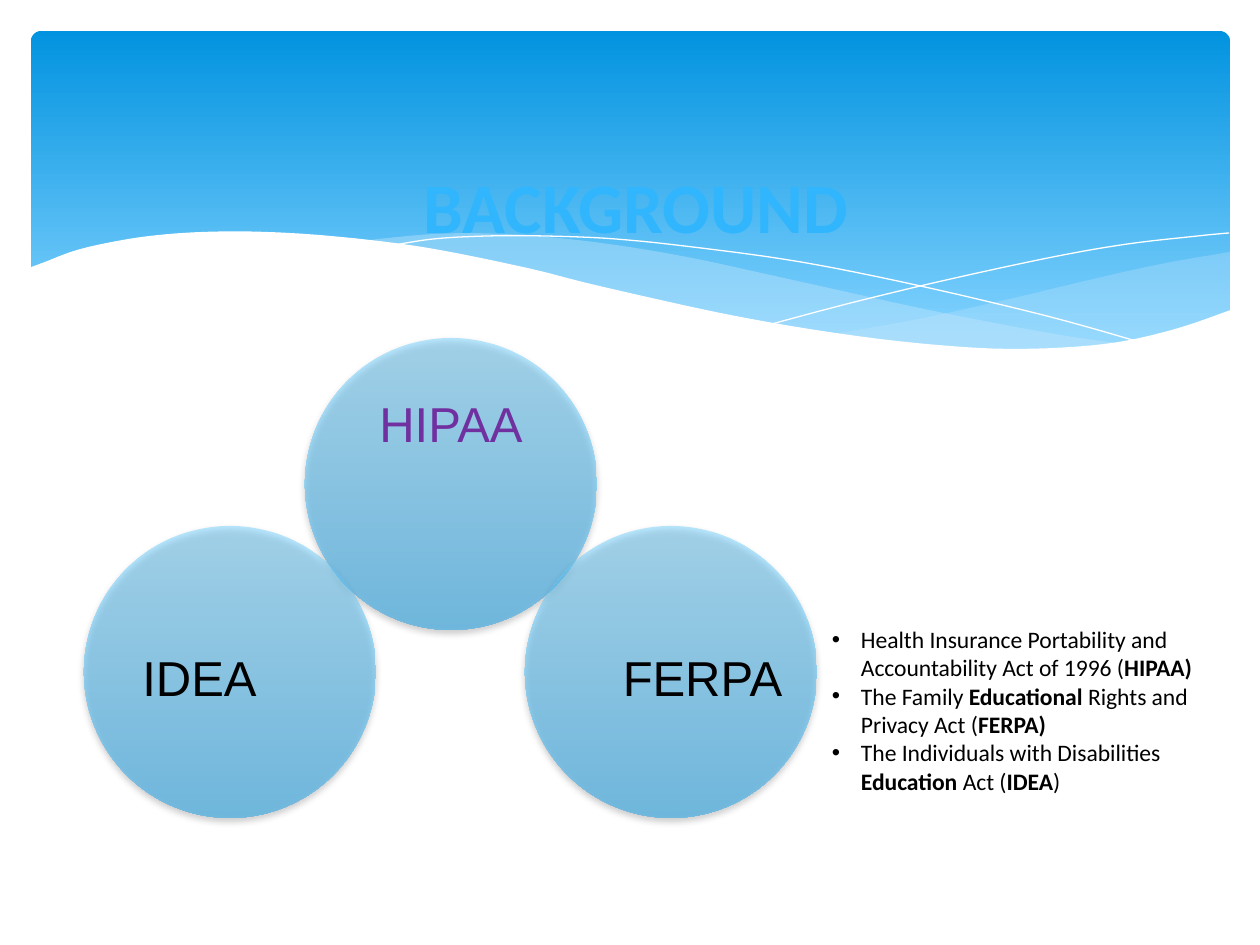
import pptx
import pptx.dml.color
import pptx.enum.shapes
import pptx.enum.text
import pptx.oxml
import pptx.oxml.ns
import pptx.util

EMU_PER_PX = 914400 / 126
SMOOTH_STEPS = 6


def px(length):
    return pptx.util.Emu(round(length * EMU_PER_PX))


def color(hex_string):
    return pptx.dml.color.RGBColor.from_string(hex_string)


def add_xml(parent, tag, **attributes):
    element = pptx.oxml.ns.qn(tag)
    child = parent.makeelement(element, attributes)
    parent.append(child)
    return child


def smooth(points):
    padded = [points[0], *points, points[-1]]
    curve = [points[0]]
    for a, b, c, d in zip(padded, padded[1:], padded[2:], padded[3:]):
        for step in range(1, SMOOTH_STEPS + 1):
            t = step / SMOOTH_STEPS
            curve.append(tuple(
                (2 * q + (r - p) * t + (2 * p - 5 * q + 4 * r - s) * t ** 2
                 + (3 * q - p - 3 * r + s) * t ** 3) / 2
                for p, q, r, s in zip(a, b, c, d)))
    return curve


class SlideBuilder:
    label_font = "Arial"
    body_font = "Calibri"

    def __init__(self, slide):
        self.slide = slide

    def set_alpha(self, shape, percent):
        for node in shape._element.spPr.iter(pptx.oxml.ns.qn("a:srgbClr")):
            add_xml(node, "a:alpha", val=str(percent * 1000))

    def gradient_shape(self, kind, box, stops, alpha=100):
        shape = self.slide.shapes.add_shape(kind, *map(px, box))
        shape.shadow.inherit = False
        shape.line.fill.background()
        shape.fill.gradient()
        shape.fill.gradient_angle = 270
        for stop, (position, hex_string) in zip(shape.fill.gradient_stops, stops):
            stop.position = position
            stop.color.rgb = color(hex_string)
        if alpha < 100:
            self.set_alpha(shape, alpha)
        return shape

    def circle(self, left, top, diameter):
        shape = self.gradient_shape(
            pptx.enum.shapes.MSO_SHAPE.OVAL, (left, top, diameter, diameter),
            [(0, "75D2FF"), (1, "13A1EB")], alpha=50)
        effects = shape._element.spPr.find(pptx.oxml.ns.qn("a:effectLst"))
        shadow = add_xml(effects, "a:outerShdw", blurRad="50800", dist="25400",
                         dir="5400000", rotWithShape="0")
        shade = add_xml(shadow, "a:srgbClr", val="000000")
        add_xml(shade, "a:alpha", val="38000")

    def outline(self, points, closed):
        start, *rest = [tuple(map(px, point)) for point in points]
        builder = self.slide.shapes.build_freeform(*start)
        builder.add_line_segments(rest, close=closed)
        shape = builder.convert_to_shape()
        shape.shadow.inherit = False
        return shape

    def wave(self, points, hex_string, alpha=100):
        shape = self.outline(points, closed=True)
        shape.fill.solid()
        shape.fill.fore_color.rgb = color(hex_string)
        shape.line.fill.background()
        if alpha < 100:
            self.set_alpha(shape, alpha)

    def curve(self, points):
        shape = self.outline(smooth(points), closed=False)
        shape.fill.background()
        shape.line.color.rgb = color("FFFFFF")
        shape.line.width = pptx.util.Pt(0.75)

    def text_frame(self, box, margins):
        frame = self.slide.shapes.add_textbox(*map(px, box)).text_frame
        frame.word_wrap = True
        (frame.margin_left, frame.margin_top,
         frame.margin_right, frame.margin_bottom) = map(px, margins)
        return frame

    def format_run(self, run, font, size, hex_string, bold=False):
        run.font.name = font
        run.font.size = pptx.util.Pt(size)
        run.font.color.rgb = color(hex_string)
        run.font.bold = bold

    def centred_text(self, text, box, margins, font, size, hex_string, bold=False):
        frame = self.text_frame(box, margins)
        frame.text = text
        paragraph = frame.paragraphs[0]
        paragraph.alignment = pptx.enum.text.PP_ALIGN.CENTER
        self.format_run(paragraph.runs[0], font, size, hex_string, bold)
        return frame

    def label(self, text, box, hex_string, bottom_margin=0):
        frame = self.centred_text(text, box, (0, 0, 0, bottom_margin),
                                  self.label_font, 28, hex_string)
        frame.vertical_anchor = pptx.enum.text.MSO_ANCHOR.MIDDLE
        frame.paragraphs[0].line_spacing = 0.9

    def title(self, text, box):
        self.centred_text(text, box, (9, 5, 9, 5), self.body_font, 40.5,
                          "31B6FD", bold=True)

    def bullets(self, items, box):
        frame = self.text_frame(box, (13, 6, 13, 6))
        for index, parts in enumerate(items):
            paragraph = frame.add_paragraph() if index else frame.paragraphs[0]
            for part_index, part in enumerate(parts):
                run = paragraph.add_run()
                run.text = part
                self.format_run(run, self.body_font, 13.5, "000000",
                                bold=part_index % 2 == 1)
            properties = paragraph._p.get_or_add_pPr()
            properties.set("marL", str(px(29)))
            properties.set("indent", str(px(-29)))
            add_xml(properties, "a:buFont", typeface="Arial")
            add_xml(properties, "a:buChar", char="•")


def main():
    presentation = pptx.Presentation()
    presentation.slide_width = px(1260)
    presentation.slide_height = px(945)
    slide = presentation.slides.add_slide(presentation.slide_layouts[6])
    builder = SlideBuilder(slide)

    banner = builder.gradient_shape(
        pptx.enum.shapes.MSO_SHAPE.ROUNDED_RECTANGLE, (31, 31, 1199, 340),
        [(0, "0293E0"), (0.9, "81D2FE")])
    banner.adjustments[0] = 0.03

    right_top = [(833, 334), (919, 319), (1014, 298), (1085, 281), (1161, 264),
                 (1230, 252)]
    right_bottom = [(1230, 311), (1196, 324), (1150, 336), (1098, 345),
                    (1038, 349), (969, 349), (901, 343), (833, 334)]
    builder.wave(smooth(right_top) + smooth(right_bottom), "C6E7FC", alpha=29)

    middle_top = [(1125, 344), (1055, 334), (934, 311), (793, 280), (682, 256),
                  (586, 241), (503, 234), (433, 234), (360, 241)]
    middle_bottom = [(360, 241), (456, 256), (566, 280), (713, 312), (819, 333),
                     (910, 345), (1003, 350), (1080, 349), (1125, 344)]
    builder.wave(smooth(middle_top) + smooth(middle_bottom), "C6E7FC", alpha=40)

    builder.curve([(389, 246), (433, 239), (487, 236), (545, 236), (616, 239),
                   (701, 248), (801, 262), (916, 285), (1047, 316), (1143, 343)])
    builder.curve([(772, 324), (847, 304), (942, 281), (1053, 257), (1128, 244),
                   (1198, 236), (1229, 233)])

    front_top = [(1231, 310), (1172, 330), (1105, 344), (1019, 349), (937, 345),
                 (842, 334), (730, 315), (599, 286), (527, 268), (428, 248),
                 (341, 237), (266, 232), (203, 232), (150, 236), (107, 243),
                 (74, 251), (45, 262), (29, 268)]
    builder.wave(smooth(front_top) + [(29, 415), (1231, 415)], "FFFFFF")

    laws = [
        ("HIPAA", (305, 338), (344, 388, 214, 131), "7030A0", 53),
        ("FERPA", (525, 526), (615, 601, 175, 160), "000000", 0),
        ("IDEA", (84, 526), (112, 601, 175, 160), "000000", 0),
    ]
    for name, corner, label_box, hex_string, bottom_margin in laws:
        builder.circle(*corner, 292)
        builder.label(name, label_box, hex_string, bottom_margin)

    builder.title("BACKGROUND", (403, 158, 466, 96))
    builder.bullets([
        ["Health Insurance Portability and Accountability Act of 1996 (", "HIPAA)"],
        ["The Family ", "Educational", " Rights and Privacy Act (", "FERPA)"],
        ["The Individuals with Disabilities ", "Education", " Act (", "IDEA", ")"],
    ], (819, 619, 431, 184))

    presentation.save("out.pptx")


if __name__ == "__main__":
    main()
